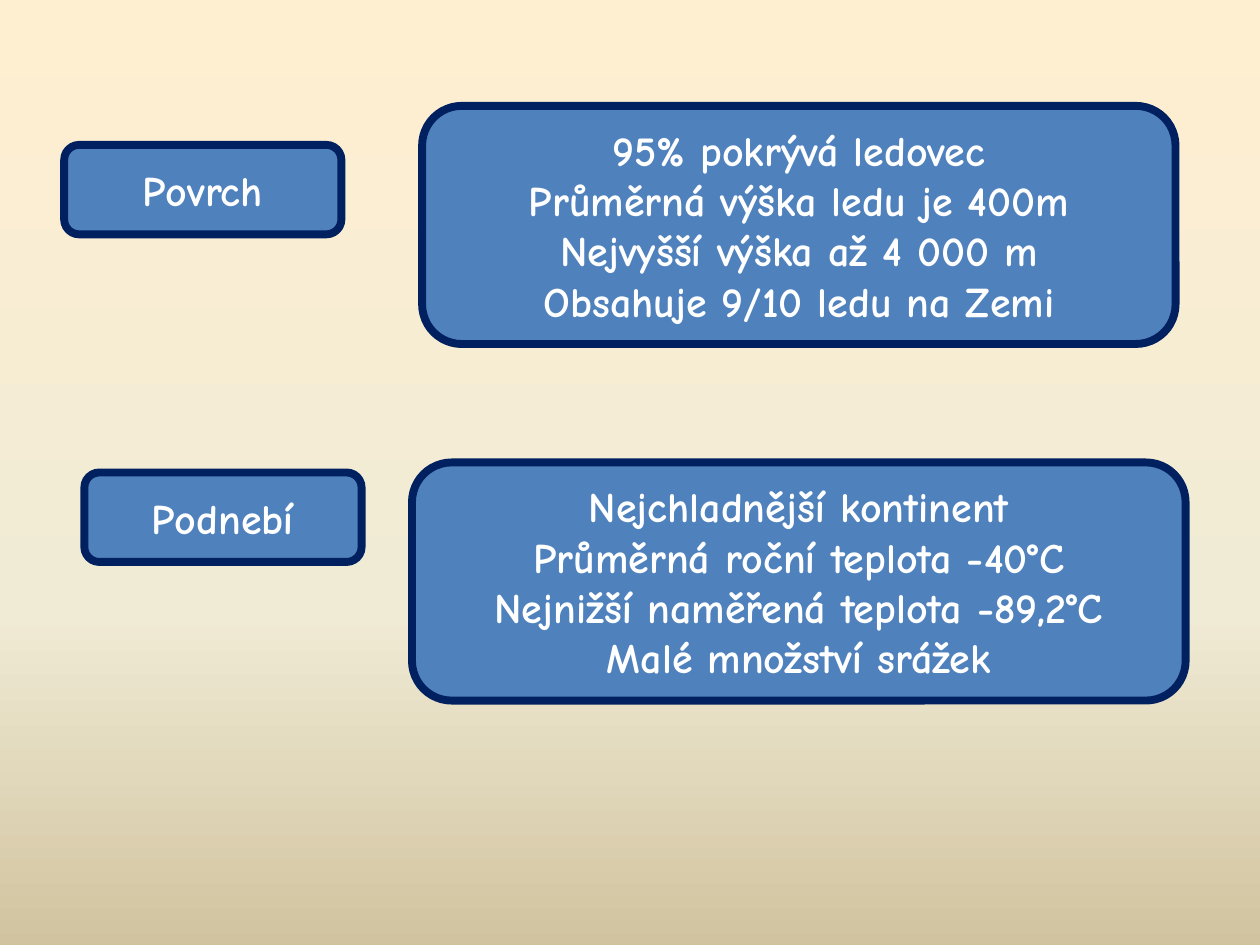
from copy import deepcopy
from dataclasses import dataclass

from pptx import Presentation
from pptx.dml.color import RGBColor
from pptx.enum.shapes import MSO_SHAPE
from pptx.enum.text import MSO_ANCHOR, PP_ALIGN
from pptx.oxml.ns import qn
from pptx.slide import Slide
from pptx.util import Inches, Pt


@dataclass(frozen=True)
class Theme:
    box_fill: RGBColor = RGBColor.from_string("4F81BD")
    box_line: RGBColor = RGBColor.from_string("002060")
    text: RGBColor = RGBColor.from_string("FFFFFF")
    background: tuple = ((0, "FFEFD1"), (0.65, "F0EBD5"), (1, "D1C39F"))
    font: str = "Comic Neue"
    text_size: Pt = Pt(24)
    line_width: Pt = Pt(4.5)


@dataclass(frozen=True)
class Box:
    left: float
    top: float
    width: float
    height: float
    lines: tuple[str, ...]


THEME = Theme()
LABEL_SIZE = (2.2, 0.71)
FACTS_HEIGHT = 1.89

BOXES = (
    Box(0.51, 1.15, *LABEL_SIZE, ("Povrch",)),
    Box(0.67, 3.75, *LABEL_SIZE, ("Podnebí",)),
    Box(3.35, 0.84, 5.98, FACTS_HEIGHT, (
        "95% pokrývá ledovec",
        "Průměrná výška ledu je 400m",
        "Nejvyšší výška až 4 000 m",
        "Obsahuje 9/10 ledu na Zemi",
    )),
    Box(3.27, 3.67, 6.14, FACTS_HEIGHT, (
        "Nejchladnější kontinent",
        "Průměrná roční teplota -40°C",
        "Nejnižší naměřená teplota -89,2°C",
        "Malé množství srážek",
    )),
)


def paint_background(slide: Slide) -> None:
    """Fill the slide with a top-to-bottom gradient of three stops."""
    fill = slide.background.fill
    fill.gradient()
    fill.gradient_angle = 270
    stop_list = slide.element.find(".//" + qn("a:gsLst"))
    stop_list.append(deepcopy(stop_list[-1]))
    for stop, (position, color) in zip(fill.gradient_stops, THEME.background):
        stop.position = position
        stop.color.rgb = RGBColor.from_string(color)


def add_box(slide: Slide, box: Box) -> None:
    shape = slide.shapes.add_shape(
        MSO_SHAPE.ROUNDED_RECTANGLE,
        Inches(box.left), Inches(box.top), Inches(box.width), Inches(box.height),
    )
    shape.shadow.inherit = False
    shape.fill.solid()
    shape.fill.fore_color.rgb = THEME.box_fill
    shape.line.color.rgb = THEME.box_line
    shape.line.width = THEME.line_width

    text_frame = shape.text_frame
    text_frame.word_wrap = True
    text_frame.vertical_anchor = MSO_ANCHOR.MIDDLE
    text_frame.text = "\n".join(box.lines)
    font_format = {"name": THEME.font, "size": THEME.text_size, "bold": True}
    for paragraph in text_frame.paragraphs:
        paragraph.alignment = PP_ALIGN.CENTER
        font = paragraph.runs[0].font
        for attribute, value in font_format.items():
            setattr(font, attribute, value)
        font.color.rgb = THEME.text


def main() -> None:
    presentation = Presentation()
    presentation.slide_width = Inches(10)
    presentation.slide_height = Inches(7.5)
    blank_layout = presentation.slide_layouts[6]
    slide = presentation.slides.add_slide(blank_layout)
    paint_background(slide)
    for box in BOXES:
        add_box(slide, box)
    presentation.save("out.pptx")


if __name__ == "__main__":
    main()
